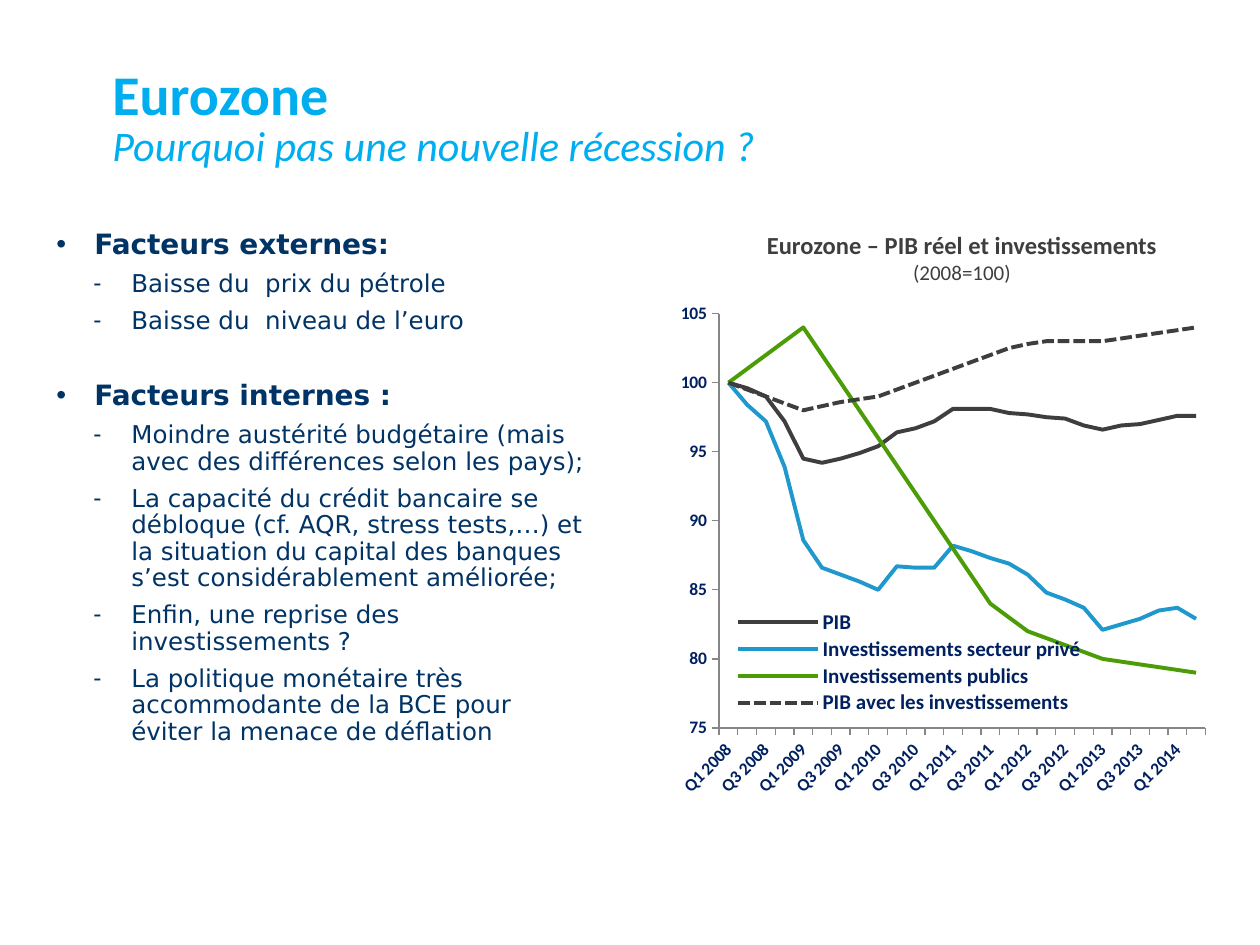
from dataclasses import dataclass

from lxml.etree import SubElement
from pptx import Presentation
from pptx.chart.data import CategoryChartData
from pptx.dml.color import RGBColor
from pptx.enum.chart import XL_CHART_TYPE, XL_LEGEND_POSITION, XL_TICK_LABEL_POSITION, XL_TICK_MARK
from pptx.enum.dml import MSO_LINE
from pptx.enum.text import PP_ALIGN
from pptx.oxml import parse_xml
from pptx.oxml.ns import nsdecls, qn
from pptx.util import Emu, Pt

PX_PER_INCH = 126


def px(length):
    return Emu(length * 914400 // PX_PER_INCH)


@dataclass(frozen=True)
class Theme:
    heading_font: str = "Calibri"
    body_font: str = "DejaVu Sans"
    cyan: str = "00AEEF"
    navy: str = "003366"
    chart_text: str = "002060"
    charcoal: str = "3E3E3E"
    blue: str = "1F99CD"
    green: str = "4B9C07"
    axis_grey: str = "868686"
    title_size: int = 32
    subtitle_size: int = 24
    head_size: int = 16
    item_size: int = 14
    chart_title_size: int = 14
    small_size: int = 12
    axis_size: int = 10


THEME = Theme()

FACTORS = [
    ("Facteurs externes:", PP_ALIGN.JUSTIFY, [
        "Baisse du  prix du pétrole",
        "Baisse du  niveau de l’euro",
    ]),
    ("Facteurs internes :", PP_ALIGN.LEFT, [
        "Moindre austérité budgétaire (mais avec des différences selon les pays);",
        "La capacité du crédit bancaire se débloque (cf. AQR, stress tests,…) et la situation "
        "du capital des banques s’est considérablement améliorée;",
        "Enfin, une reprise des investissements ?",
        "La politique monétaire très accommodante de la BCE pour éviter la menace de déflation",
    ]),
]

QUARTERS = [f"Q{index % 4 + 1} {2008 + index // 4}" for index in range(26)]

SERIES = [
    ("PIB", THEME.charcoal, None,
     [100, 99.6, 99, 97.2, 94.5, 94.2, 94.5, 94.9, 95.4, 96.4, 96.7, 97.2, 98.1,
      98.1, 98.1, 97.8, 97.7, 97.5, 97.4, 96.9, 96.6, 96.9, 97, 97.3, 97.6, 97.6]),
    ("Investissements secteur privé", THEME.blue, None,
     [100, 98.4, 97.2, 93.9, 88.6, 86.6, 86.1, 85.6, 85, 86.7, 86.6, 86.6, 88.2,
      87.8, 87.3, 86.9, 86.1, 84.8, 84.3, 83.7, 82.1, 82.5, 82.9, 83.5, 83.7, 82.9]),
    ("Investissements publics", THEME.green, None,
     [100, 101, 102, 103, 104, 102, 100, 98, 96, 94, 92, 90, 88,
      86, 84, 83, 82, 81.5, 81, 80.5, 80, 79.8, 79.6, 79.4, 79.2, 79]),
    ("PIB avec les investissements", THEME.charcoal, MSO_LINE.SQUARE_DOT,
     [100, 99.5, 99, 98.5, 98, 98.3, 98.6, 98.8, 99, 99.5, 100, 100.5, 101,
      101.5, 102, 102.5, 102.8, 103, 103, 103, 103, 103.2, 103.4, 103.6, 103.8, 104]),
]


def style_font(font, name, size, color, bold=False, italic=False):
    font.name = name
    font.size = Pt(size)
    font.bold = bold
    font.italic = italic
    font.color.rgb = RGBColor.from_string(color)


def add_bullet(para, mark, color, indent, hanging):
    properties = para._p.get_or_add_pPr()
    properties.set("marL", str(px(indent)))
    properties.set("indent", str(-px(hanging)))
    bullet_color = SubElement(properties, qn("a:buClr"))
    SubElement(bullet_color, qn("a:srgbClr"), val=color)
    SubElement(properties, qn("a:buFont"), typeface="Arial")
    SubElement(properties, qn("a:buChar"), char=mark)


def manual_layout(x, y, width, height, inner=False):
    """Layout element placing a chart part by fractions of the chart area."""
    target = '<c:layoutTarget val="inner"/>' if inner else ""
    return parse_xml(
        f'<c:layout {nsdecls("c")}><c:manualLayout>{target}'
        '<c:xMode val="edge"/><c:yMode val="edge"/>'
        f'<c:x val="{x}"/><c:y val="{y}"/><c:w val="{width}"/><c:h val="{height}"/>'
        '</c:manualLayout></c:layout>')


def replace_layout(parent, layout, position):
    for old in parent.findall(qn("c:layout")):
        parent.remove(old)
    parent.insert(position, layout)


class SlideBuilder:
    def __init__(self, page, theme):
        self.page = page
        self.theme = theme

    def text_box(self, left, top, width, height):
        box = self.page.shapes.add_textbox(px(left), px(top), px(width), px(height))
        box.text_frame.word_wrap = True
        return box.text_frame

    def title(self, title, subtitle):
        theme = self.theme
        para = self.text_box(100, 64, 886, 129).paragraphs[0]
        para.text = f"{title}\v{subtitle}"
        para.line_spacing = 0.85
        first, second = para.runs
        style_font(first.font, theme.heading_font, theme.title_size, theme.cyan, bold=True)
        style_font(second.font, theme.heading_font, theme.subtitle_size, theme.cyan, italic=True)

    def chart_title(self, title, unit):
        theme = self.theme
        frame = self.text_box(679, 224, 566, 68)
        frame.text = f"{title}\n{unit}"
        sizes = (theme.chart_title_size, theme.small_size)
        for para, size, bold in zip(frame.paragraphs, sizes, (True, False)):
            para.alignment = PP_ALIGN.CENTER
            style_font(para.runs[0].font, theme.heading_font, size, theme.charcoal, bold)

    def factor_list(self, groups):
        theme = self.theme
        lines = []
        for head, alignment, items in groups:
            lines.append((head, 0, PP_ALIGN.JUSTIFY))
            lines += [(item, 1, alignment) for item in items]
        frame = self.text_box(44, 224, 556, 605)
        frame.text = "\n".join(text for text, _, _ in lines)
        for index, (para, (_, level, alignment)) in enumerate(zip(frame.paragraphs, lines)):
            add_bullet(para, "•-"[level], theme.navy, 38 + 37 * level, 38)
            para.level = level
            para.alignment = alignment
            para.line_spacing = 0.9
            para.space_after = Pt(3)
            if index:
                para.space_before = Pt(3 if level else 24)
            size = theme.item_size if level else theme.head_size
            style_font(para.runs[0].font, theme.body_font, size, theme.navy, bold=level == 0)

    def line_chart(self, categories, series):
        theme = self.theme
        data = CategoryChartData(number_format="0")
        data.categories = categories
        for name, _, _, values in series:
            data.add_series(name, values)
        chart = self.page.shapes.add_chart(
            XL_CHART_TYPE.LINE, px(640), px(296), px(586), px(520), data).chart
        chart.has_title = False
        style_font(chart.font, theme.heading_font, theme.axis_size, theme.chart_text, bold=True)
        plot = chart.plots[0]
        plot.vary_by_categories = False
        for line, (_, color, dash, _) in zip(plot.series, series):
            line.smooth = False
            line.format.line.width = Pt(2.25)
            line.format.line.color.rgb = RGBColor.from_string(color)
            if dash:
                line.format.line.dash_style = dash
        self.style_axes(chart)

        chart.has_legend = True
        legend = chart.legend
        legend.position = XL_LEGEND_POSITION.RIGHT
        legend.include_in_layout = True
        style_font(legend.font, theme.heading_font, theme.small_size, theme.chart_text, bold=True)
        replace_layout(legend._element, manual_layout(0.15, 0.6, 0.62, 0.21), 1)
        plot_area = chart._chartSpace.chart.plotArea
        replace_layout(plot_area, manual_layout(0.135, 0.034, 0.83, 0.797, inner=True), 0)

    def style_axes(self, chart):
        theme = self.theme
        for axis in (chart.category_axis, chart.value_axis):
            axis.has_major_gridlines = False
            axis.major_tick_mark = XL_TICK_MARK.OUTSIDE
            axis.minor_tick_mark = XL_TICK_MARK.NONE
            axis.tick_label_position = XL_TICK_LABEL_POSITION.LOW
            axis.format.line.width = Pt(0.75)
            axis.format.line.color.rgb = RGBColor.from_string(theme.axis_grey)
            style_font(axis.tick_labels.font, theme.heading_font, theme.axis_size,
                       theme.chart_text, bold=True)
        chart.value_axis.minimum_scale = 75
        chart.value_axis.maximum_scale = 105
        chart.value_axis.major_unit = 5
        category = chart.category_axis._element
        category.find(qn("c:txPr")).find(qn("a:bodyPr")).set("rot", "-2700000")
        skip = parse_xml(f'<c:tickLblSkip {nsdecls("c")} val="2"/>')
        category.find(qn("c:noMultiLvlLbl")).addprevious(skip)


def main():
    deck = Presentation()
    deck.slide_width, deck.slide_height = px(1260), px(945)
    builder = SlideBuilder(deck.slides.add_slide(deck.slide_layouts[6]), THEME)
    builder.line_chart(QUARTERS, SERIES)
    builder.chart_title("Eurozone – PIB réel et investissements", "(2008=100)")
    builder.factor_list(FACTORS)
    builder.title("Eurozone", "Pourquoi pas une nouvelle récession ?")
    deck.save("out.pptx")


if __name__ == "__main__":
    main()
